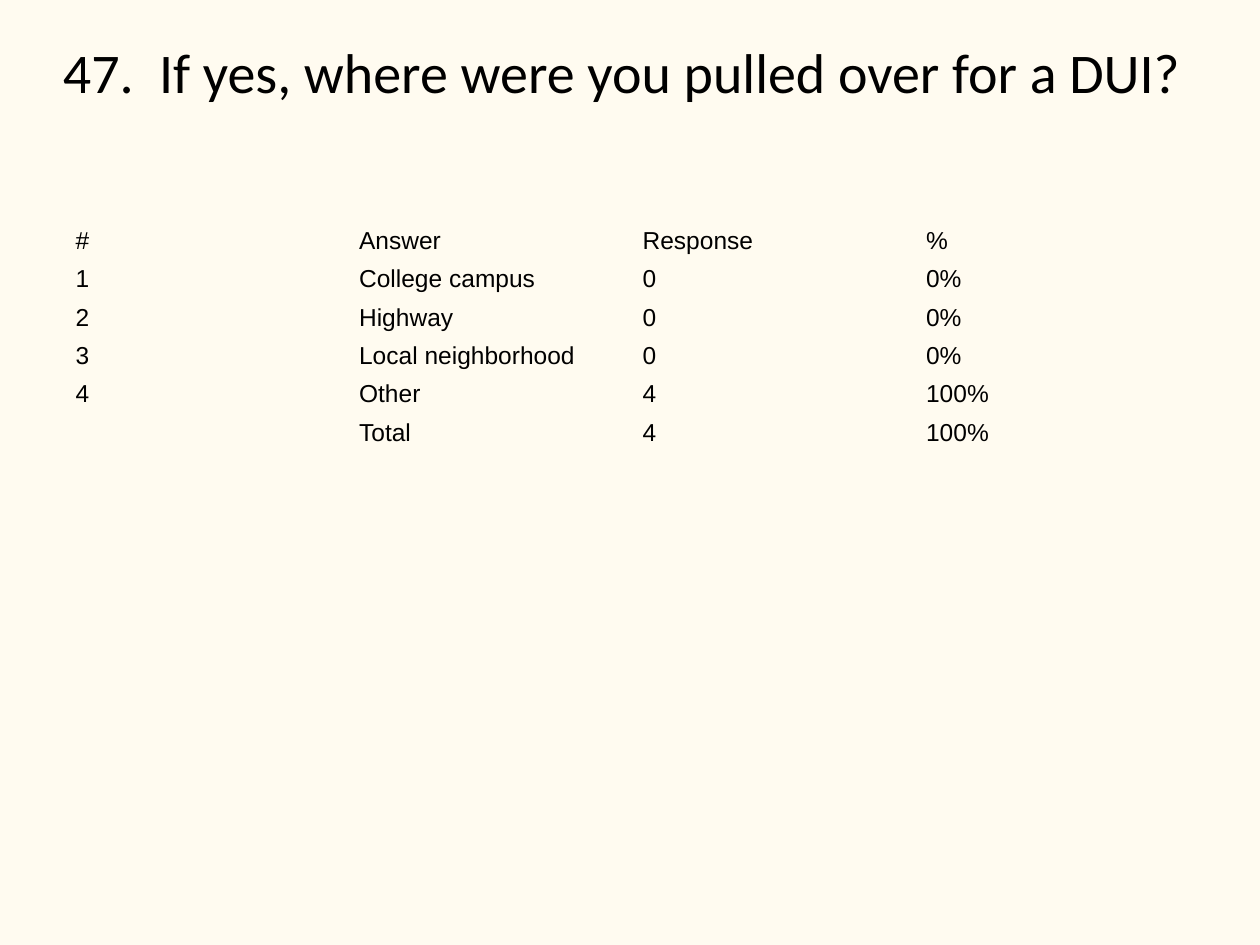
import pptx
import pptx.dml.color
import pptx.enum.shapes
import pptx.enum.text
import pptx.oxml.ns
import pptx.util

Cm = pptx.util.Cm
COLOURS = {"background": "FFFBF0", "text": "000000"}
NO_STYLE_NO_GRID = "{2D5ABB26-0587-4C30-8999-92F81FD0307C}"
TITLE = "47.  If yes, where were you pulled over for a DUI?"
ANSWERS = [
    ("#", "Answer", "Response", "%"),
    ("1", "College campus", "0", "0%"),
    ("2", "Highway", "0", "0%"),
    ("3", "Local neighborhood", "0", "0%"),
    ("4", "Other", "4", "100%"),
    ("", "Total", "4", "100%"),
]


def colour(name):
    return pptx.dml.color.RGBColor.from_string(COLOURS[name])


def add_span(para, text, font, size):
    span = para.add_run()
    span.text = text
    span.font.name = font
    span.font.size = pptx.util.Pt(size)
    span.font.color.rgb = colour("text")


def add_title(page, text):
    box = page.shapes.add_shape(
        pptx.enum.shapes.MSO_SHAPE.ROUNDED_RECTANGLE,
        Cm(1.27), Cm(0.76), Cm(22.86), Cm(3.18),
    )
    box.adjustments[0] = 0
    box.shadow.inherit = False
    box.fill.background()
    box.line.fill.background()
    frame = box.text_frame
    frame.word_wrap = True
    frame.vertical_anchor = pptx.enum.text.MSO_ANCHOR.TOP
    frame.margin_left = frame.margin_right = 0
    frame.margin_top = frame.margin_bottom = 0
    para = frame.paragraphs[0]
    para.alignment = pptx.enum.text.PP_ALIGN.LEFT
    add_span(para, text, "Calibri", 32)


def add_answer_table(page, answers):
    """Add a plain table without grid lines, fills or a header style."""
    row_height = Cm(0.48)
    holder = page.shapes.add_table(
        len(answers), len(answers[0]),
        Cm(1.27), Cm(4.45), Cm(22.86), row_height * len(answers),
    )
    table = holder.table
    table.first_row = table.horz_banding = False
    style = table._tbl.tblPr.find(pptx.oxml.ns.qn("a:tableStyleId"))
    style.text = NO_STYLE_NO_GRID
    for row, texts in zip(table.rows, answers):
        row.height = row_height
        for cell, text in zip(row.cells, texts):
            cell.fill.background()
            cell.margin_bottom = Cm(0.09)
            if text:
                add_span(cell.text_frame.paragraphs[0], text, "Arial", 14)


def main():
    deck = pptx.Presentation()
    deck.slide_width, deck.slide_height = Cm(25.4), Cm(19.05)
    page = deck.slides.add_slide(deck.slide_layouts[6])
    page.background.fill.solid()
    page.background.fill.fore_color.rgb = colour("background")
    add_title(page, TITLE)
    add_answer_table(page, ANSWERS)
    deck.save("out.pptx")


if __name__ == "__main__":
    main()
